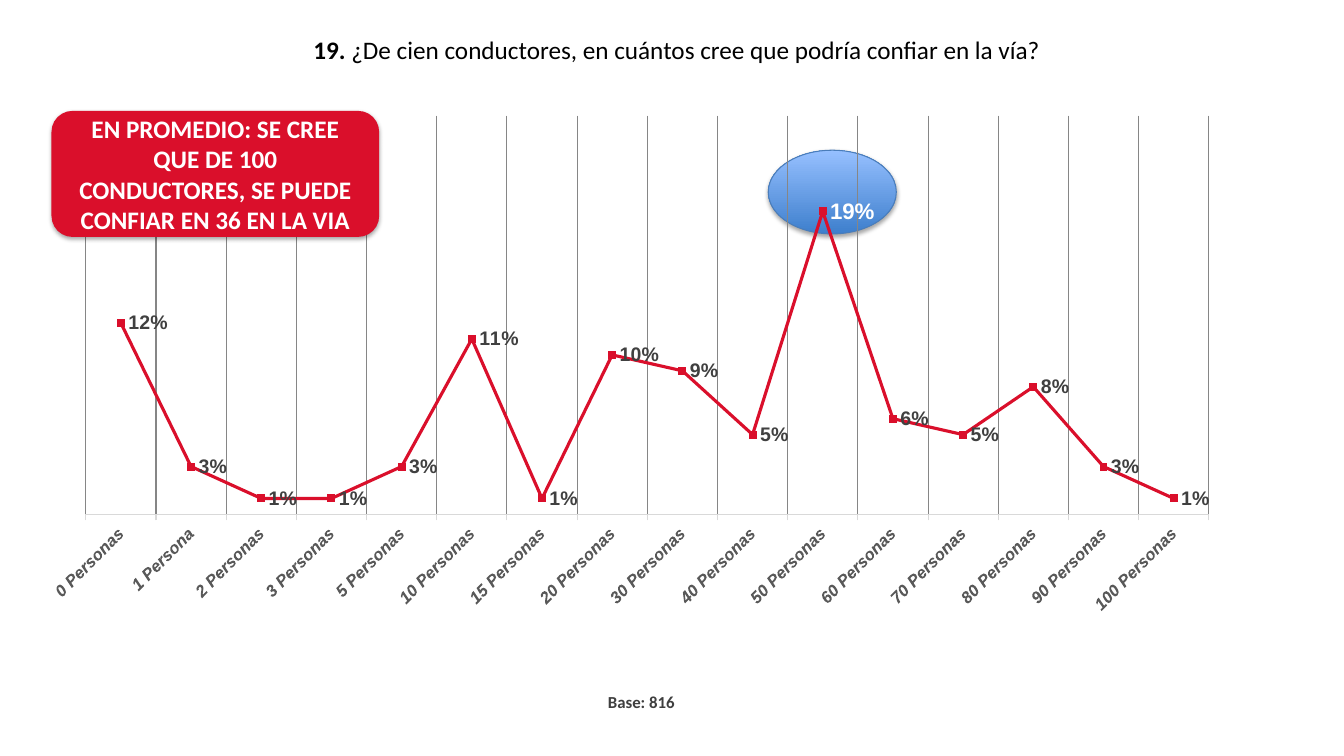
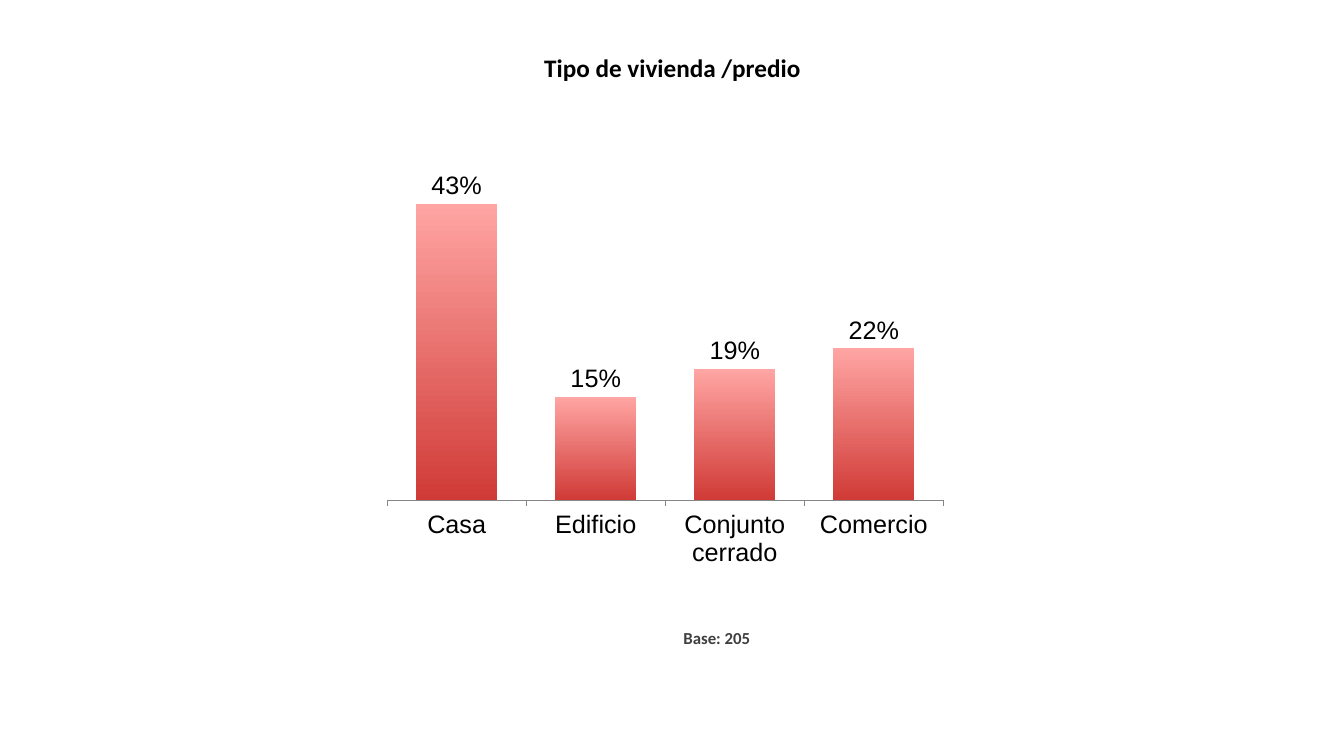
from lxml import etree
from pptx import Presentation
from pptx import util as u
from pptx.chart.data import CategoryChartData
from pptx.dml.color import RGBColor
from pptx.enum import chart as ch, shapes, text
from pptx.oxml import parse_xml
from pptx.oxml.ns import nsdecls, qn

# Shared style
WIDE, HIGH = u.Inches(13.33), u.Inches(7.5)
RED, BLACK, WHITE, GRAY, RULE = "DA0F2B", "000000", "FFFFFF", "3F3F3F", "868686"
LEFT, MID, RIGHT = text.PP_ALIGN.LEFT, text.PP_ALIGN.CENTER, text.PP_ALIGN.RIGHT


def tint(code):
    return RGBColor.from_string(code)


def place(x, y, w, h):
    """Turn percentages of the slide into lengths."""
    return [int(size * part / 100)
            for size, part in ((WIDE, x), (HIGH, y), (WIDE, w), (HIGH, h))]


def style(font, size, color, bold=False, name="Arial"):
    font.size, font.bold, font.name = u.Pt(size), bold, name
    font.color.rgb = tint(color)


def ramp(fill, low, high):
    """Fill upwards from the low colour to the high one."""
    fill.gradient()
    fill.gradient_angle = 90
    for stop, code in zip(fill.gradient_stops, (low, high)):
        stop.color.rgb = tint(code)


# Text and shapes
def write(frame, runs, size, color, align):
    frame.word_wrap = True
    para = frame.paragraphs[0]
    para.alignment = align
    for words, bold in runs:
        run = para.add_run()
        run.text = words
        style(run.font, size, color, bold, "Calibri")
    return para


def label(slide, area, runs, size=18, color=BLACK, align=MID):
    box = slide.shapes.add_textbox(*place(*area))
    return write(box.text_frame, runs, size, color, align)


def base(slide, x, y, count):
    para = label(slide, (x, y, 9.75, 3.33), [(f"Base: {count}", True)],
                 12, GRAY, RIGHT)
    para.line_spacing = 0.83


def raised(slide, kind, area):
    """Add a shape with a soft shadow below it."""
    shape = slide.shapes.add_shape(kind, *place(*area))
    shape.shadow.inherit = False
    glow = shape._element.spPr.find(qn("a:effectLst"))
    glow.append(parse_xml(
        f'<a:outerShdw {nsdecls("a")} blurRad="40000" dist="23000" dir="5400000" '
        'rotWithShape="0"><a:srgbClr val="000000"><a:alpha val="35000"/>'
        '</a:srgbClr></a:outerShdw>'))
    return shape


# Charts
def layout(chart, *shares):
    plot = chart._chartSpace.chart.plotArea
    for old in plot.findall(qn("c:layout")):
        plot.remove(old)
    node = parse_xml(f'<c:layout {nsdecls("c")}><c:manualLayout/></c:layout>')
    rules = [("layoutTarget", "inner"), ("xMode", "edge"), ("yMode", "edge")]
    rules += zip("xywh", shares)
    for tag, val in rules:
        etree.SubElement(node[0], qn(f"c:{tag}")).set("val", str(val))
    plot.insert(0, node)


def graph(slide, kind, area, data, top, size, line):
    """Add a one-series percentage chart with a hidden value axis."""
    table = CategoryChartData(number_format="0%")
    table.categories = list(data)
    table.add_series("Series 1", list(data.values()))
    chart = slide.shapes.add_chart(kind, *place(*area), table).chart
    chart.has_legend = chart.has_title = False
    style(chart.font, size, BLACK)
    axis = chart.value_axis
    axis.visible = axis.has_major_gridlines = False
    axis.minimum_scale, axis.maximum_scale = 0, top
    cats = chart.category_axis
    cats.major_tick_mark = ch.XL_TICK_MARK.OUTSIDE
    cats.format.line.color.rgb = tint(line)
    cats.format.line.width = u.Pt(0.75)
    plot = chart.plots[0]
    plot.vary_by_categories = False
    # Labels belong to the series, so a single point can differ
    tags = plot.series[0].data_labels
    tags.show_value = True
    tags.number_format, tags.number_format_is_linked = "0%", False
    return chart, plot, tags


def trend(slide, data):
    chart, plot, tags = graph(slide, ch.XL_CHART_TYPE.LINE_MARKERS,
                              (3.83, 9.33, 88.22, 76.67), data, 0.25, 10, "D9D9D9")
    layout(chart, 0.024, 0.078, 0.952, 0.688)
    cats = chart.category_axis
    cats.reverse_order = True
    cats.has_major_gridlines = True
    grid = cats.major_gridlines.format.line
    grid.color.rgb, grid.width = tint(RULE), u.Pt(0.75)
    style(cats.tick_labels.font, 12, "595959", True)
    cats.tick_labels.font.italic = True
    cats._element.txPr.bodyPr.set("rot", "-2700000")
    style(tags.font, 14, "404040", True)
    tags.position = ch.XL_LABEL_POSITION.RIGHT
    # Line, markers and the label of the peak
    line = plot.series[0]
    line.smooth = False
    line.format.line.color.rgb, line.format.line.width = tint(RED), u.Pt(2.25)
    mark = line.marker
    mark.style, mark.size = ch.XL_MARKER_STYLE.SQUARE, 5
    mark.format.fill.solid()
    mark.format.fill.fore_color.rgb = tint(RED)
    mark.format.line.color.rgb = tint(RED)
    peak = line.points[list(data.values()).index(max(data.values()))].data_label
    style(peak.font, 16, WHITE, True)
    peak.position = ch.XL_LABEL_POSITION.RIGHT


def bars(slide, data):
    chart, plot, tags = graph(slide, ch.XL_CHART_TYPE.COLUMN_CLUSTERED,
                              (27.01, 18.53, 46.14, 64.27), data, 0.5, 18, RULE)
    layout(chart, 0.039, 0.032, 0.897, 0.709)
    plot.gap_width = 71
    tags.position = ch.XL_LABEL_POSITION.OUTSIDE_END
    ramp(plot.series[0].format.fill, "D03B37", "FFA5A3")


# Slides
def trust(slide):
    halo = raised(slide, shapes.MSO_SHAPE.OVAL, (57.16, 19.87, 9.53, 11.07))
    ramp(halo.fill, "3E7FCD", "96C0FF")
    halo.line.color.rgb, halo.line.width = tint("4A7DBA"), u.Pt(0.75)
    label(slide, (22.58, 3.87, 70.89, 5.33),
          [("19.", True),
           (" ¿De cien conductores, en cuántos cree que podría confiar en la vía?",
            False)], align=LEFT)
    counts = (100, 90, 80, 70, 60, 50, 40, 30, 20, 15, 10, 5, 3, 2, 1, 0)
    rates = (1, 3, 8, 5, 6, 19, 5, 9, 10, 1, 11, 3, 1, 1, 3, 12)
    trend(slide, {f"{n} Persona{'' if n == 1 else 's'}": rate / 100
                  for n, rate in zip(counts, rates)})
    base(slide, 41.19, 91.33, 816)
    note = raised(slide, shapes.MSO_SHAPE.ROUNDED_RECTANGLE,
                  (3.83, 14.67, 24.38, 16.67))
    note.fill.solid()
    note.fill.fore_color.rgb = tint(RED)
    note.line.fill.background()
    note.text_frame.vertical_anchor = text.MSO_ANCHOR.MIDDLE
    write(note.text_frame,
          [("EN PROMEDIO: SE CREE QUE DE 100 CONDUCTORES, "
            "SE PUEDE CONFIAR EN 36 EN LA VIA", True)], 18, WHITE, MID)


def homes(slide):
    label(slide, (23.33, 6.2, 53.41, 5.33), [("Tipo de vivienda /predio", True)])
    base(slide, 46.81, 82.8, 205)
    bars(slide, {"Casa": 0.43, "Edificio": 0.15,
                 "Conjunto cerrado": 0.19, "Comercio": 0.22})


def main():
    deck = Presentation()
    deck.slide_width, deck.slide_height = WIDE, HIGH
    for draw in (trust, homes):
        draw(deck.slides.add_slide(deck.slide_layouts[6]))
    deck.save("out.pptx")


if __name__ == "__main__":
    main()
